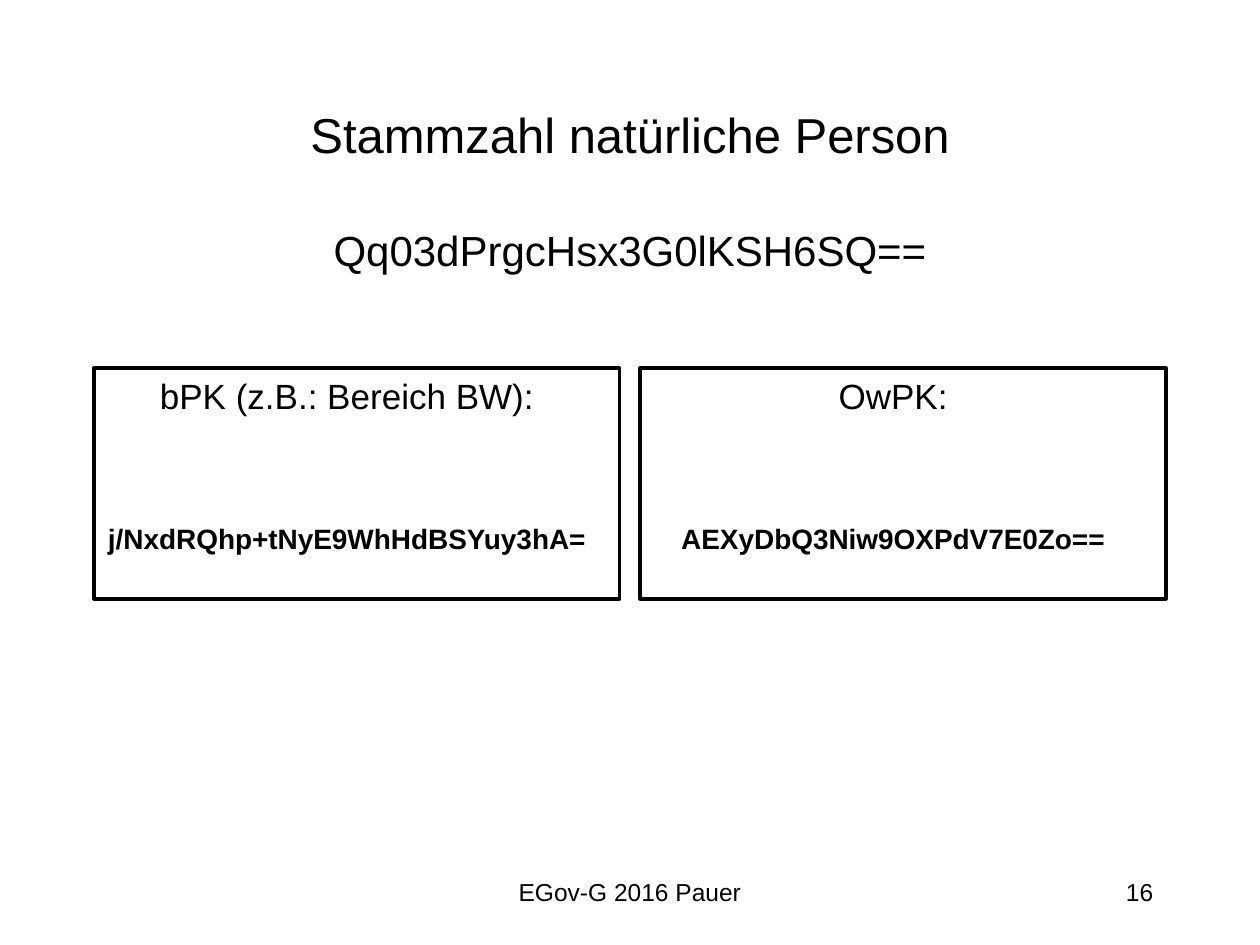
from pptx import Presentation
from pptx import util as u
from pptx.dml.color import RGBColor
from pptx.enum import shapes, text

COLORS = {"ink": "000000", "paper": "FFFFFF"}
FONT = "Arial"
PANELS = [
    ("bPK (z.B.: Bereich BW):", "j/NxdRQhp+tNyE9WhHdBSYuy3hA="),
    ("OwPK:", "AEXyDbQ3Niw9OXPdV7E0Zo=="),
]


def color(name):
    return RGBColor.from_string(COLORS[name])


def place(item, box):
    item.left, item.top, item.width, item.height = (u.Cm(value) for value in box)


def write(frame, lines, anchor, align=text.PP_ALIGN.CENTER, gap=0):
    frame.word_wrap = True
    frame.auto_size = text.MSO_AUTO_SIZE.NONE
    frame.vertical_anchor = anchor
    for index, (words, size, bold) in enumerate(lines):
        para = frame.paragraphs[0] if index == 0 else frame.add_paragraph()
        para.alignment = align
        para.line_spacing = 1
        para.space_before = u.Pt(gap if index else 0)
        span = para.add_run()
        span.text = words
        span.font.name = FONT
        span.font.size = u.Pt(size)
        span.font.bold = bold
        span.font.color.rgb = color("ink")


def add_text(page, box, *args, **options):
    item = page.shapes.add_textbox(*(u.Cm(value) for value in box))
    write(item.text_frame, *args, **options)


def add_heading(page, box):
    title = page.shapes.title
    place(title, box)
    lines = [
        ("Stammzahl natürliche Person", 28, False),
        ("Qq03dPrgcHsx3G0lKSH6SQ==", 24, False),
    ]
    write(title.text_frame, lines, text.MSO_ANCHOR.MIDDLE, gap=35)


def add_panel(page, box, label, key):
    left, top, width, height = box
    lines = [(label, 20, False), (key, 16, True)]
    add_text(page, (left - 0.2, top, width, height), lines,
             text.MSO_ANCHOR.TOP, gap=60)
    border = page.shapes.add_shape(
        shapes.MSO_SHAPE.RECTANGLE, *(u.Cm(value) for value in box))
    border.shadow.inherit = False
    border.fill.background()
    border.line.color.rgb = color("ink")
    border.line.width = u.Pt(2.25)


def add_panels(page, box, gap):
    left, top, width, height = box
    panel_width = (width - gap * (len(PANELS) - 1)) / len(PANELS)
    for index, (label, key) in enumerate(PANELS):
        panel_left = left + index * (panel_width + gap)
        add_panel(page, (panel_left, top, panel_width, height), label, key)


def add_footer(page, box):
    left, top, width, height = box
    note_width, number_width = 8.05, 5.3
    middle = text.MSO_ANCHOR.MIDDLE
    add_text(page, (left + (width - note_width) / 2, top, note_width, height),
             [("EGov-G 2016 Pauer", 14, False)], middle)
    add_text(page, (left + width - number_width, top, number_width, height),
             [("16", 14, False)], middle, align=text.PP_ALIGN.RIGHT)


def main():
    deck = Presentation()
    deck.slide_width, deck.slide_height = u.Cm(25.4), u.Cm(19.05)
    page = deck.slides.add_slide(deck.slide_layouts[5])
    page.background.fill.solid()
    page.background.fill.fore_color.rgb = color("paper")
    left, width = 1.9, 21.6
    add_heading(page, (left, 1.7, width, 4.24))
    add_panels(page, (left, 7.42, width, 4.65), gap=0.42)
    add_footer(page, (left, 17.35, width, 1.27))
    deck.save("out.pptx")


if __name__ == "__main__":
    main()
